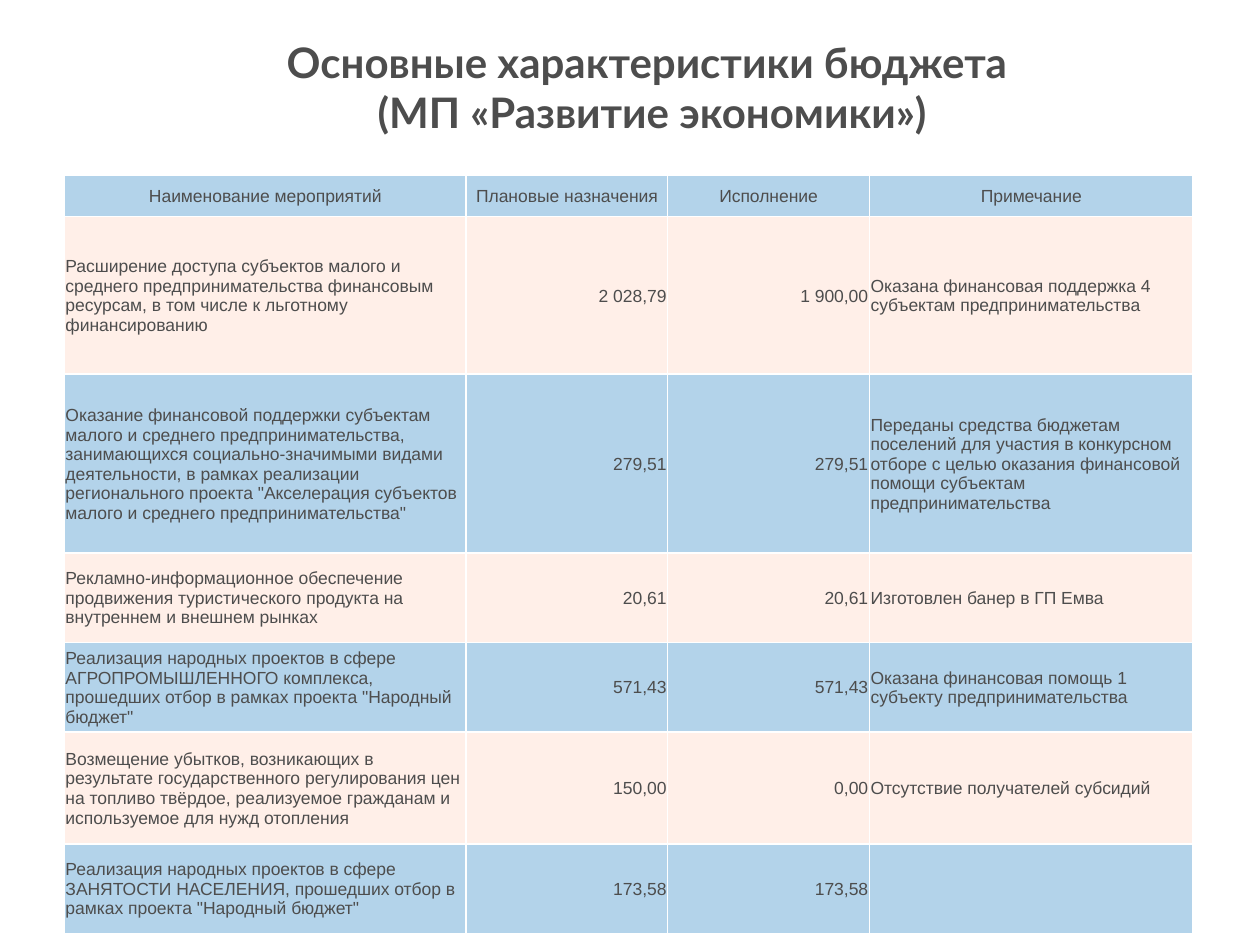
from lxml import etree
from pptx import Presentation, util as u
from pptx.dml.color import RGBColor
from pptx.enum import text
from pptx.oxml.ns import qn

INK, BLUE, ROSE, WHITE = "4D4D4D", "B3D3EA", "FFEFE8", "FFFFFF"
LEFT, CENTER, RIGHT = text.PP_ALIGN.LEFT, text.PP_ALIGN.CENTER, text.PP_ALIGN.RIGHT

# Table grid in inches
COLS = [3.19, 1.6, 1.6, 2.57]
ROWS = [0.33, 1.25, 1.42, 0.71, 0.71, 0.89, 0.71]
ALIGN = [LEFT, RIGHT, RIGHT, LEFT]

TITLE = ["Основные характеристики бюджета ", "(МП «Развитие экономики»)"]
DATA = [
    ["Наименование мероприятий", "Плановые назначения", "Исполнение", "Примечание"],
    ["Расширение доступа субъектов малого и среднего предпринимательства "
     "финансовым ресурсам, в том числе к льготному финансированию",
     "2 028,79", "1 900,00",
     "Оказана финансовая поддержка 4 субъектам предпринимательства"],
    ["Оказание финансовой поддержки субъектам малого и среднего "
     "предпринимательства, занимающихся социально-значимыми видами "
     "деятельности, в рамках реализации регионального проекта "
     '"Акселерация субъектов малого и среднего предпринимательства"',
     "279,51", "279,51",
     "Переданы средства бюджетам поселений для участия в конкурсном отборе "
     "с целью оказания финансовой помощи субъектам предпринимательства"],
    ["Рекламно-информационное обеспечение продвижения туристического "
     "продукта на внутреннем и внешнем рынках",
     "20,61", "20,61", "Изготовлен банер в ГП Емва"],
    ["Реализация народных проектов в сфере АГРОПРОМЫШЛЕННОГО комплекса, "
     'прошедших отбор в рамках проекта "Народный бюджет"',
     "571,43", "571,43",
     "Оказана финансовая помощь 1 субъекту предпринимательства"],
    ["Возмещение убытков, возникающих в результате государственного "
     "регулирования цен на топливо твёрдое, реализуемое гражданам и "
     "используемое для нужд отопления",
     "150,00", "0,00", "Отсутствие получателей субсидий"],
    ["Реализация народных проектов в сфере ЗАНЯТОСТИ НАСЕЛЕНИЯ, "
     'прошедших отбор в рамках проекта "Народный бюджет"',
     "173,58", "173,58", ""],
]


def color(code):
    return RGBColor.from_string(code)


def add_run(para, words, face, size, bold=False):
    run = para.add_run()
    run.text = words
    font = run.font
    font.name, font.size, font.bold = face, u.Pt(size), bold
    font.color.rgb = color(INK)


def add_title(slide, lines, left, top, width, height):
    frame = slide.shapes.add_textbox(
        *map(u.Inches, (left, top, width, height))).text_frame
    frame.word_wrap = True
    frame.margin_top = u.Inches(0.08)
    frame.vertical_anchor = text.MSO_ANCHOR.TOP
    para = frame.paragraphs[0]
    para.alignment = CENTER
    for i, line in enumerate(lines):
        if i:
            para.add_line_break()
        add_run(para, line, "Lato", 24, True)


def add_border(cell, code, width):
    props = cell._tc.get_or_add_tcPr()
    for side in ("lnL", "lnR", "lnT", "lnB"):
        line = etree.SubElement(props, qn("a:" + side), w=str(u.Pt(width)))
        fill = etree.SubElement(line, qn("a:solidFill"))
        etree.SubElement(fill, qn("a:srgbClr"), val=code)


def fill_cell(cell, words, align, back):
    cell.margin_left = cell.margin_right = cell.margin_top = u.Inches(0.01)
    cell.margin_bottom = 0
    cell.vertical_anchor = text.MSO_ANCHOR.MIDDLE
    add_border(cell, WHITE, 1)
    cell.fill.solid()
    cell.fill.fore_color.rgb = color(back)
    if words:
        para = cell.text_frame.paragraphs[0]
        para.alignment = align
        add_run(para, words, "Arial", 10)


def add_grid(slide, left, top):
    table = slide.shapes.add_table(
        len(ROWS), len(COLS),
        *map(u.Inches, (left, top, sum(COLS), sum(ROWS)))).table
    for col, width in zip(table.columns, COLS):
        col.width = u.Inches(width)
    for r, height in enumerate(ROWS):
        table.rows[r].height = u.Inches(height)
        for c, words in enumerate(DATA[r]):
            align = ALIGN[c] if r else CENTER
            fill_cell(table.cell(r, c), words, align, ROSE if r % 2 else BLUE)


def main():
    deck = Presentation()
    deck.slide_width, deck.slide_height = u.Inches(10), u.Inches(7.5)
    slide = deck.slides.add_slide(deck.slide_layouts[6])

    # Heading
    add_title(slide, TITLE, 1.3, 0.21, 7.75, 0.55)

    # Budget table
    add_grid(slide, 0.51, 1.39)

    deck.save("out.pptx")


if __name__ == "__main__":
    main()
